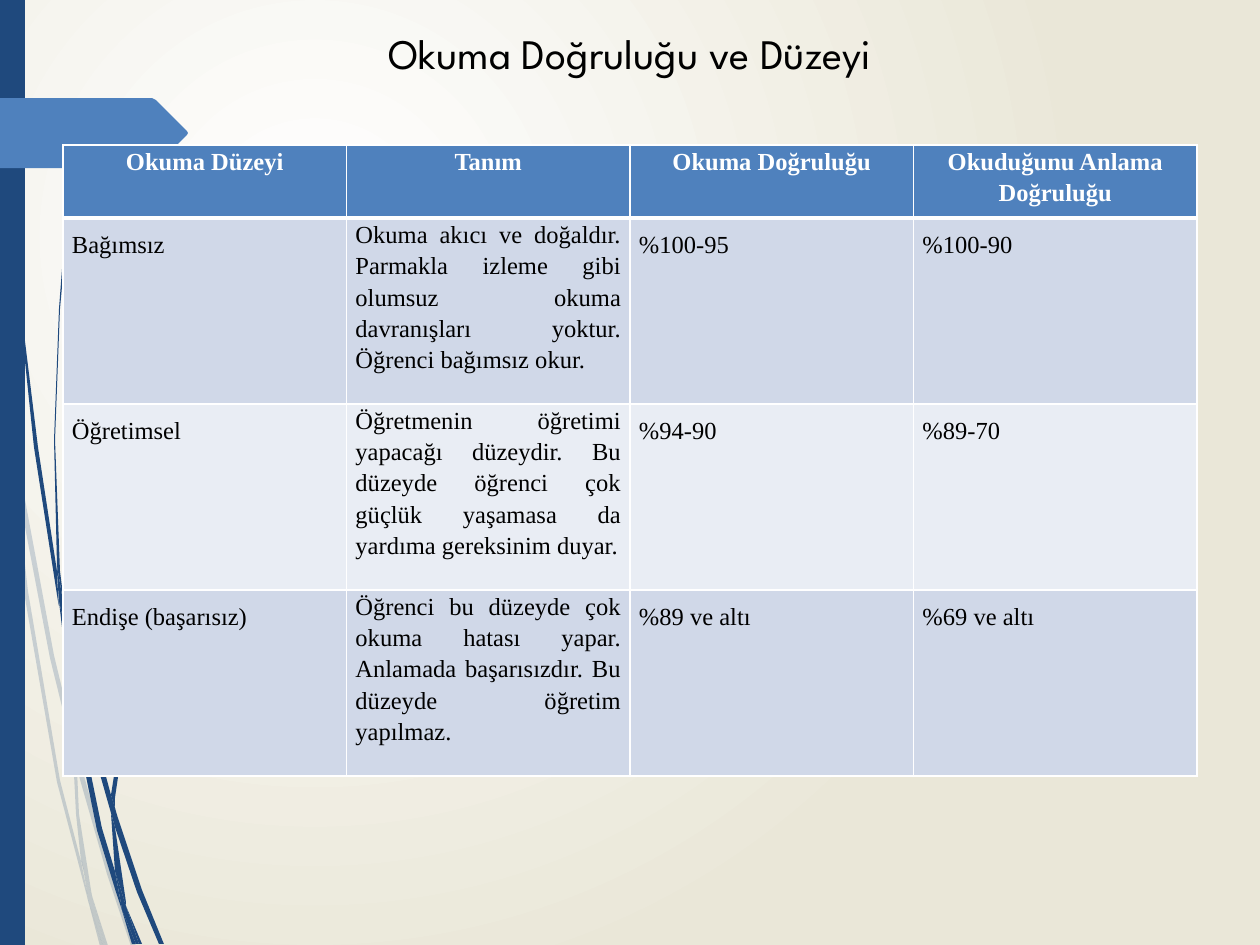
import pptx
import pptx.dml.color
import pptx.enum.shapes
import pptx.enum.text
import pptx.oxml.ns
import pptx.util
from lxml import etree

SCALE = 914400 / 126  # EMU in one px
COLORS = {"navy": "1F497D", "blue": "4F81BD", "band": "D0D8E8", "light": "E9EDF4",
          "white": "FFFFFF", "cream": "EAE7D8", "black": "000000"}
ALIGN = pptx.enum.text.PP_ALIGN
qn = pptx.oxml.ns.qn


def px(length):
    return pptx.util.Emu(round(length * SCALE))


def rgb(name):
    return pptx.dml.color.RGBColor.from_string(COLORS[name])


class SlideMaker:
    """Holds the deck style and the current page."""
    title_font = "League Spartan"
    table_font = "Times New Roman"

    def __init__(self, deck):
        self.page = deck.slides.add_slide(deck.slide_layouts[5])

    def background(self, inner, outer):
        fill = self.page.background.fill
        fill.gradient()
        for stop, name in zip(fill.gradient_stops, (inner, outer)):
            stop.color.rgb = rgb(name)
        gradient = self.page.element.find(".//" + qn("a:gradFill"))
        gradient.remove(gradient.find(qn("a:lin")))
        circle = etree.SubElement(gradient, qn("a:path"), {"path": "circle"})
        etree.SubElement(circle, qn("a:fillToRect"),
                         {"l": "50000", "t": "50000", "r": "100000", "b": "100000"})

    def paint(self, shape, color, opacity=100):
        shape.shadow.inherit = False
        shape.line.fill.background()
        shape.fill.solid()
        shape.fill.fore_color.rgb = rgb(color)
        if opacity < 100:
            tint = shape.element.spPr.find(".//" + qn("a:srgbClr"))
            etree.SubElement(tint, qn("a:alpha"), {"val": str(opacity * 1000)})

    def rectangle(self, left, top, width, height, color):
        kind = pptx.enum.shapes.MSO_SHAPE.RECTANGLE
        shape = self.page.shapes.add_shape(kind, px(left), px(top), px(width), px(height))
        self.paint(shape, color)

    def outline(self, points, color, opacity=100):
        builder = self.page.shapes.build_freeform(*points[0], scale=SCALE)
        builder.add_line_segments(points[1:], close=True)
        self.paint(builder.convert_to_shape(), color, opacity)

    def add_span(self, para, text, font, size, color, bold=False):
        span = para.add_run()
        span.text = text
        span.font.name = font
        span.font.size = pptx.util.Pt(size)
        span.font.bold = bold
        span.font.color.rgb = rgb(color)

    def title(self, text, left, top, width, height):
        box = self.page.shapes.title
        box.left, box.top, box.width, box.height = map(px, (left, top, width, height))
        box.text_frame.vertical_anchor = pptx.enum.text.MSO_ANCHOR.TOP
        para = box.text_frame.paragraphs[0]
        para.alignment = ALIGN.CENTER
        self.add_span(para, text, self.title_font, 24, "black")

    def borders(self, cell, top, bottom):
        properties = cell._tc.get_or_add_tcPr()
        widths = {"lnL": 1, "lnR": 1, "lnT": top, "lnB": bottom}
        for index, (side, points) in enumerate(widths.items()):
            line = etree.Element(qn("a:" + side), {"w": str(int(pptx.util.Pt(points)))})
            fill = etree.SubElement(line, qn("a:solidFill"))
            etree.SubElement(fill, qn("a:srgbClr"), {"val": COLORS["white"]})
            properties.insert(index, line)

    def table(self, rows, left, top, width, heights):
        count = len(rows[0])
        frame = self.page.shapes.add_table(len(rows), count, px(left), px(top),
                                           px(width), px(sum(heights)))
        table = frame.table
        table.horz_banding = False
        for column in table.columns:
            column.width = px(width / count)
        for r, texts in enumerate(rows):
            table.rows[r].height = px(heights[r])
            for c, text in enumerate(texts):
                self.cell(table.cell(r, c), text, r, c)

    def cell(self, cell, text, row, column):
        header = row == 0
        cell.margin_left = cell.margin_right = px(9)
        cell.margin_top = cell.margin_bottom = 0
        cell.fill.solid()
        cell.fill.fore_color.rgb = rgb("blue" if header else "band" if row % 2 else "light")
        self.borders(cell, 3 if row == 1 else 1, 3 if header else 1)
        para = cell.text_frame.paragraphs[0]
        para.alignment = ALIGN.CENTER if header else ALIGN.JUSTIFY
        para.line_spacing = 1.15 if header or column == 1 else 1.5
        self.add_span(para, text, self.table_font, 14, "white" if header else "black", header)


PALE_STRANDS = [
    [(10, 441), (8, 406), (0, 355), (0, 377), (9, 433)],
    [(50, 658), (74, 755), (74, 738), (54, 655), (13, 435), (15, 474)],
    [(81, 765), (77, 751), (77, 769), (107, 874), (131, 946), (136, 946), (111, 872)],
    [(105, 946), (108, 946), (92, 896)],
    [(81, 861), (60, 780), (28, 591), (15, 474), (10, 441), (24, 592), (57, 782),
     (81, 873), (88, 900), (87, 891)],
    [(73, 755), (76, 814), (81, 861), (84, 872), (92, 896), (91, 890), (79, 814),
     (77, 769), (77, 766)],
    [(77, 736), (96, 582), (140, 440), (200, 309), (236, 249), (253, 220), (273, 194),
     (273, 193), (252, 220), (234, 248), (199, 307), (139, 438), (94, 581), (74, 736),
     (74, 738), (77, 751)],
    [(88, 900), (100, 946), (103, 946)],
    [(77, 766), (77, 769), (77, 751), (74, 738), (73, 755)],
    [(84, 872), (82, 861), (87, 891), (88, 900), (103, 946), (105, 946), (92, 896)],
]
NAVY_STRANDS = [
    [(6, 139), (18, 294), (34, 447), (58, 601), (59, 606), (57, 576), (57, 571),
     (38, 447), (19, 292), (8, 137), (5, 60), (4, 0), (3, 0), (4, 60)],
    [(92, 746), (111, 813), (111, 798), (111, 795), (97, 743), (63, 595), (67, 636)],
    [(118, 818), (115, 808), (115, 827), (137, 892), (159, 944), (164, 944), (142, 890)],
    [(115, 871), (102, 828), (76, 701), (67, 636), (59, 601), (71, 702), (97, 830),
     (116, 892), (122, 910), (121, 903)],
    [(63, 595), (60, 571), (55, 440), (60, 309), (66, 243), (73, 178), (72, 178),
     (64, 243), (59, 309), (54, 440), (57, 566), (62, 595)],
    [(139, 944), (142, 944), (126, 906)],
    [(59, 601), (67, 636), (63, 595), (62, 595), (57, 566), (57, 571)],
    [(115, 798), (130, 696), (165, 600), (213, 512), (241, 471), (256, 452), (272, 433),
     (271, 433), (256, 451), (241, 470), (212, 510), (163, 597), (127, 694), (111, 795),
     (115, 808)],
    [(122, 910), (132, 944), (136, 944)],
    [(111, 813), (115, 871), (121, 890), (126, 906), (126, 902), (115, 827), (113, 820)],
    [(111, 813), (113, 820), (115, 827), (115, 808), (111, 795), (111, 798)],
    [(121, 890), (115, 871), (121, 903), (122, 910), (136, 944), (139, 944), (126, 906)],
]
ARROW_TAB = [(0, 98), (152, 98), (156, 100), (187, 131), (188, 133), (187, 135),
             (156, 166), (152, 168), (0, 168)]
READING_LEVELS = [
    ["Okuma Düzeyi", "Tanım", "Okuma Doğruluğu", "Okuduğunu Anlama Doğruluğu"],
    ["Bağımsız",
     "Okuma akıcı ve doğaldır. Parmakla izleme gibi olumsuz okuma davranışları yoktur. "
     "Öğrenci bağımsız okur.", "%100-95", "%100-90"],
    ["Öğretimsel",
     "Öğretmenin öğretimi yapacağı düzeydir. Bu düzeyde öğrenci çok güçlük yaşamasa da "
     "yardıma gereksinim duyar.", "%94-90", "%89-70"],
    ["Endişe (başarısız)",
     "Öğrenci bu düzeyde çok okuma hatası yapar. Anlamada başarısızdır. Bu düzeyde "
     "öğretim yapılmaz.", "%89 ve altı", "%69 ve altı"],
]


def main():
    deck = pptx.Presentation()
    deck.slide_width, deck.slide_height = px(1260), px(945)
    maker = SlideMaker(deck)
    maker.background("white", "cream")
    for strand in PALE_STRANDS:
        maker.outline(strand, "navy", 20)
    for strand in NAVY_STRANDS:
        maker.outline(strand, "navy")
    maker.rectangle(0, 0, 25, 945, "navy")
    maker.outline(ARROW_TAB, "blue")
    maker.title("Okuma Doğruluğu ve Düzeyi", 63, 21, 1134, 105)
    maker.table(READING_LEVELS, 63, 145, 1134, [73, 186, 186, 186])
    deck.save("out.pptx")


if __name__ == "__main__":
    main()
